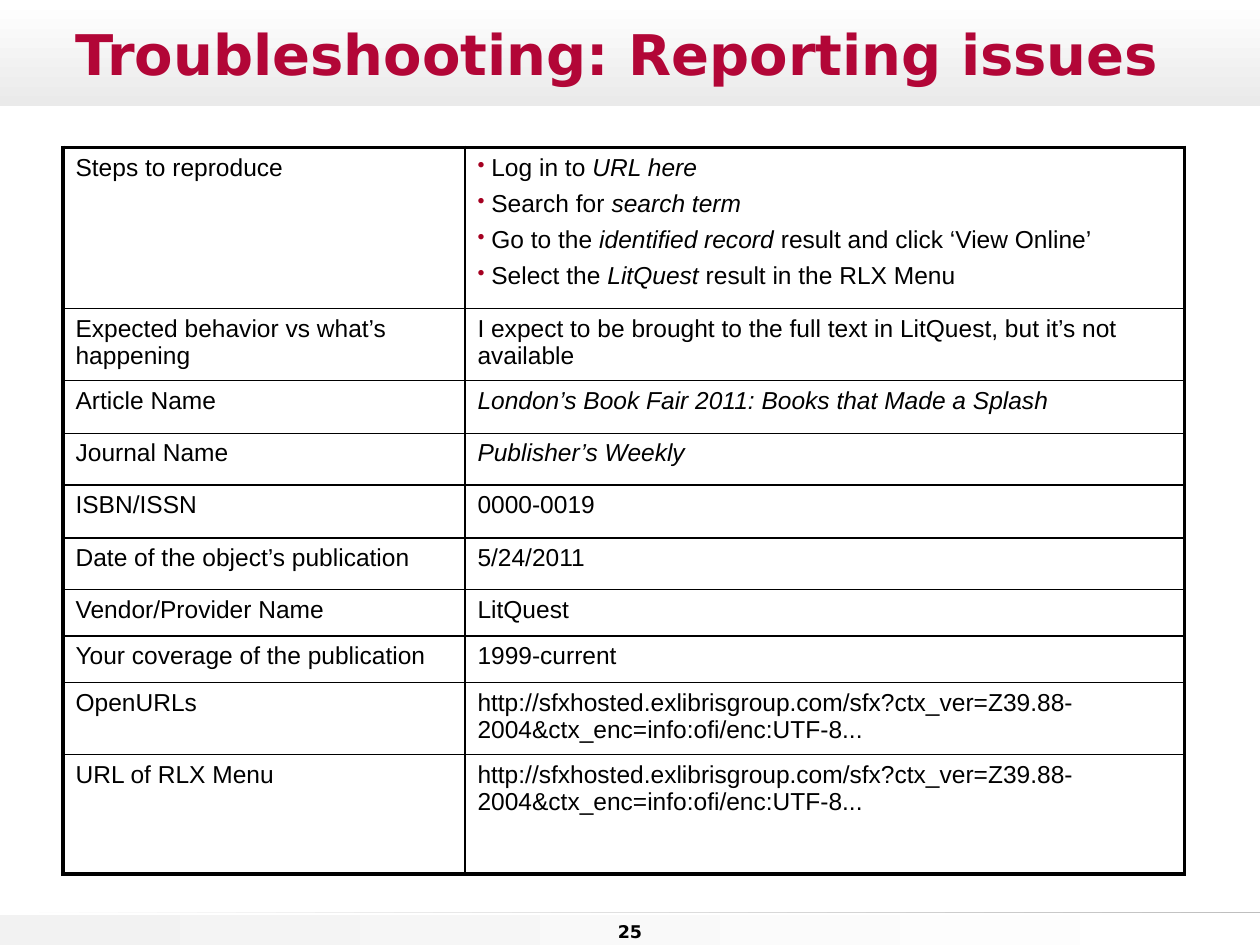
from dataclasses import dataclass

from lxml.etree import SubElement
from pptx import Presentation
from pptx.dml.color import RGBColor
from pptx.enum.shapes import MSO_SHAPE
from pptx.enum.text import MSO_ANCHOR, PP_ALIGN
from pptx.oxml.ns import qn
from pptx.util import Inches, Pt

COLORS = {
    "title": "B20637", "text": "000000", "bullet": "A50021", "border": "000000",
    "white": "FFFFFF", "panel": "E6E6E6", "header": "EAEAEA",
    "footer": "F2F2F2", "rule": "BFBFBF",
}
HEADING_FONT, BODY_FONT = "DejaVu Sans", "Arial"
COLUMN_WIDTHS = (3.19, 5.71)
OUTER, INNER = 2.25, 1  # border widths in points


@dataclass
class Band:
    """A background block; two colours make a gradient."""
    left: float
    top: float
    width: float
    height: float
    colors: tuple[str, ...]
    angle: int = 0
    shape: MSO_SHAPE = MSO_SHAPE.RECTANGLE


@dataclass
class Row:
    """A table row; each value line is a list of (text, italic) runs."""
    height: float
    label: str
    lines: list[list[tuple[str, bool]]]
    bulleted: bool = False


BANDS = [
    Band(0, 7.26, 10, 0.24, ("footer", "white")),
    Band(0.57, 1.35, 8.85, 5.34, ("panel",), shape=MSO_SHAPE.ROUNDED_RECTANGLE),
    Band(0, 7.24, 10, 0.01, ("white", "rule")),
    Band(0, 0, 10, 0.84, ("white", "header"), angle=270),
    Band(0, 0.85, 10, 5.84, ("white",)),
]

LINK = "http://sfxhosted.exlibrisgroup.com/sfx?ctx_ver=Z39.88-2004&ctx_enc=info:ofi/enc:UTF-8..."
ROWS = [
    Row(1.28, "Steps to reproduce", [
        [("Log in to ", False), ("URL here", True)],
        [("Search for ", False), ("search term", True)],
        [("Go to the ", False), ("identified record", True),
         (" result and click ‘View Online’", False)],
        [("Select the ", False), ("LitQuest", True),
         (" result in the RLX Menu", False)],
    ], bulleted=True),
    Row(0.57, "Expected behavior vs what’s happening",
        [[("I expect to be brought to the full text in LitQuest, but it’s not available", False)]]),
    Row(0.42, "Article Name",
        [[("London’s Book Fair 2011: Books that Made a Splash", True)]]),
    Row(0.41, "Journal Name", [[("Publisher’s Weekly", True)]]),
    Row(0.42, "ISBN/ISSN", [[("0000-0019", False)]]),
    Row(0.41, "Date of the object’s publication", [[("5/24/2011", False)]]),
    Row(0.37, "Vendor/Provider Name", [[("LitQuest", False)]]),
    Row(0.37, "Your coverage of the publication", [[("1999-current", False)]]),
    Row(0.57, "OpenURLs", [[(LINK, False)]]),
    Row(0.95, "URL of RLX Menu", [[(LINK, False)]]),
]


def rgb(name: str) -> RGBColor:
    return RGBColor.from_string(COLORS[name])


def add_run(p, text: str, size: float, font: str, color: str,
            bold: bool = False, italic: bool = False) -> None:
    r = p.add_run()
    r.text = text
    r.font.size, r.font.name = Pt(size), font
    r.font.bold, r.font.italic = bold, italic
    r.font.color.rgb = rgb(color)


def add_band(s, band: Band) -> None:
    sp = s.shapes.add_shape(band.shape, Inches(band.left), Inches(band.top),
                            Inches(band.width), Inches(band.height))
    sp.shadow.inherit = False
    sp.line.fill.background()
    if band.shape == MSO_SHAPE.ROUNDED_RECTANGLE:
        sp.adjustments[0] = 0.04
    if len(band.colors) == 1:
        sp.fill.solid()
        sp.fill.fore_color.rgb = rgb(band.colors[0])
    else:
        sp.fill.gradient()
        sp.fill.gradient_angle = band.angle
        for stop, color in zip(sp.fill.gradient_stops, band.colors):
            stop.color.rgb = rgb(color)


def add_heading(s, left: float, top: float, width: float, height: float,
                text: str, size: float, color: str, align, anchor):
    sp = s.shapes.add_textbox(Inches(left), Inches(top), Inches(width), Inches(height))
    tf = sp.text_frame
    tf.word_wrap = True
    tf.vertical_anchor = anchor
    p = tf.paragraphs[0]
    p.alignment = align
    add_run(p, text, size, HEADING_FONT, color, bold=True)
    return tf


def set_borders(cell, widths: dict[str, float]) -> None:
    tc_pr = cell._tc.get_or_add_tcPr()
    for side, width in widths.items():
        ln = SubElement(tc_pr, qn(f"a:ln{side}"), w=str(Pt(width)))
        fill = SubElement(ln, qn("a:solidFill"))
        SubElement(fill, qn("a:srgbClr"), val=COLORS["border"])


def add_bullet(p) -> None:
    p_pr = p._p.get_or_add_pPr()
    p_pr.set("marL", str(Inches(0.11)))
    p_pr.set("indent", str(-Inches(0.11)))
    color = SubElement(p_pr, qn("a:buClr"))
    SubElement(color, qn("a:srgbClr"), val=COLORS["bullet"])
    SubElement(p_pr, qn("a:buSzPct"), val="85000")
    SubElement(p_pr, qn("a:buChar"), char="•")


def fill_cell(cell, lines: list[list[tuple[str, bool]]], bulleted: bool) -> None:
    tf = cell.text_frame
    for i, runs in enumerate(lines):
        p = tf.add_paragraph() if i else tf.paragraphs[0]
        if bulleted:
            add_bullet(p)
        if i:
            p.space_before = Pt(4.9)
        for text, italic in runs:
            add_run(p, text, 14, BODY_FONT, "text", italic=italic)


def add_issue_table(s, rows: list[Row]) -> None:
    frame = s.shapes.add_table(len(rows), len(COLUMN_WIDTHS), Inches(0.5), Inches(1.17),
                               Inches(sum(COLUMN_WIDTHS)),
                               Inches(sum(row.height for row in rows)))
    table = frame.table
    table.first_row = table.horz_banding = False
    for column, width in zip(table.columns, COLUMN_WIDTHS):
        column.width = Inches(width)
    last_row, last_col = len(rows) - 1, len(COLUMN_WIDTHS) - 1
    for i, row in enumerate(rows):
        table.rows[i].height = Inches(row.height)
        contents = (([[(row.label, False)]], False), (row.lines, row.bulleted))
        for j, (lines, bulleted) in enumerate(contents):
            cell = table.cell(i, j)
            # Heavy frame outside, thin lines inside
            set_borders(cell, {
                "L": OUTER if j == 0 else INNER,
                "R": OUTER if j == last_col else INNER,
                "T": OUTER if i == 0 else INNER,
                "B": OUTER if i == last_row else INNER,
            })
            cell.fill.background()
            fill_cell(cell, lines, bulleted)


def main() -> None:
    prs = Presentation()
    prs.slide_width, prs.slide_height = Inches(10), Inches(7.5)
    s = prs.slides.add_slide(prs.slide_layouts[6])

    # Background
    for band in BANDS:
        add_band(s, band)

    # Page number and title
    number = add_heading(s, 4.68, 7.03, 0.64, 0.47, "25", 10, "text",
                         PP_ALIGN.CENTER, MSO_ANCHOR.BOTTOM)
    number.margin_bottom = Inches(0.02)
    add_heading(s, 0.5, 0.13, 9, 0.58, "Troubleshooting: Reporting issues", 32, "title",
                PP_ALIGN.LEFT, MSO_ANCHOR.MIDDLE)

    # Issue report
    add_issue_table(s, ROWS)
    prs.save("out.pptx")


if __name__ == "__main__":
    main()
